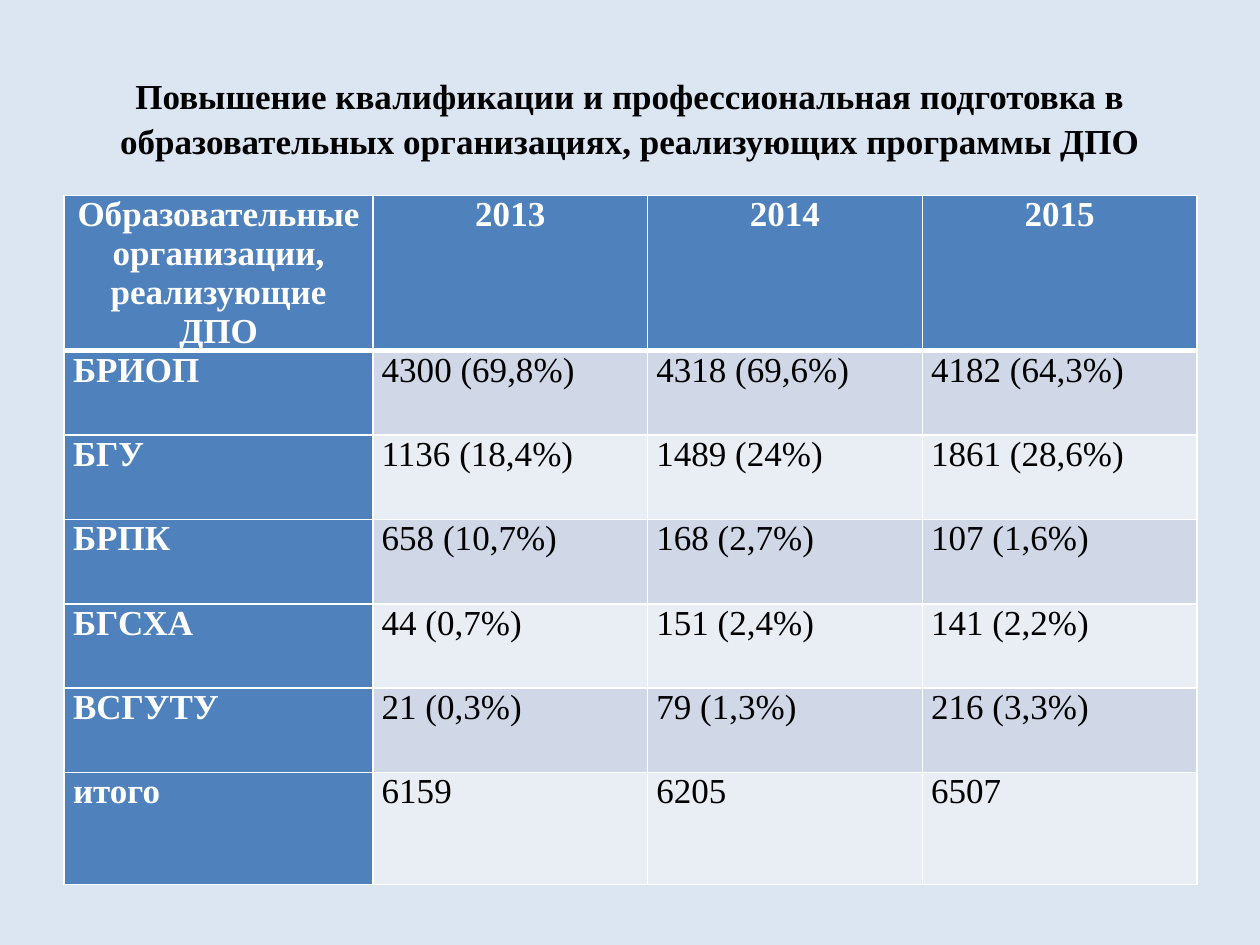
import pptx
import pptx.util
import pptx.dml.color
import pptx.enum.text
import pptx.oxml
import pptx.oxml.ns

Inches = pptx.util.Inches
Pt = pptx.util.Pt
RGBColor = pptx.dml.color.RGBColor
Align = pptx.enum.text.PP_ALIGN
Anchor = pptx.enum.text.MSO_ANCHOR

SKY = RGBColor(0xDC, 0xE6, 0xF2)
BLUE = RGBColor(0x4F, 0x81, 0xBD)
BANDS = [RGBColor(0xD0, 0xD8, 0xE8), RGBColor(0xE9, 0xED, 0xF4)]
WHITE = RGBColor(0xFF, 0xFF, 0xFF)
BLACK = RGBColor(0, 0, 0)
FONT = "Times New Roman"

TITLE = ("Повышение квалификации и профессиональная подготовка в "
         "образовательных организациях, реализующих программы ДПО")
ROWS = [
    ["Образовательные организации, реализующие ДПО", "2013", "2014", "2015"],
    ["БРИОП", "4300 (69,8%)", "4318 (69,6%)", "4182 (64,3%)"],
    ["БГУ", "1136 (18,4%)", "1489 (24%)", "1861 (28,6%)"],
    ["БРПК", "658 (10,7%)", "168 (2,7%)", "107 (1,6%)"],
    ["БГСХА", "44 (0,7%)", "151 (2,4%)", "141 (2,2%)"],
    ["ВСГУТУ", "21 (0,3%)", "79 (1,3%)", "216 (3,3%)"],
    ["итого", "6159", "6205", "6507"],
]
WIDTHS = [2.45, 2.18, 2.18, 2.18]
HEIGHTS = [1] + [0.67] * 5 + [0.89]


def write(frame, text, size=20, color=BLACK, bold=False, align=Align.CENTER,
          space=None):
    par = frame.paragraphs[0]
    par.alignment = align
    if space:
        par.line_spacing = space
    run = par.add_run()
    run.text = text
    font = run.font
    font.name, font.size, font.bold = FONT, Pt(size), bold
    font.color.rgb = color


def edge(cell, side, width):
    # Borders come before the fill in the cell properties
    line = pptx.oxml.parse_xml(
        f'<a:{side} {pptx.oxml.ns.nsdecls("a")} w="{Pt(width)}">'
        f'<a:solidFill><a:srgbClr val="{WHITE}"/></a:solidFill></a:{side}>')
    cell._tc.get_or_add_tcPr().append(line)


def head(slide, left, top, width, height):
    title = slide.shapes.title
    title.left, title.top = Inches(left), Inches(top)
    title.width, title.height = Inches(width), Inches(height)
    frame = title.text_frame
    frame.word_wrap = True
    frame.vertical_anchor = Anchor.MIDDLE
    write(frame, TITLE, bold=True, space=1.08)


def grid(slide, left, top, width, height):
    table = slide.shapes.add_table(
        len(ROWS), len(WIDTHS), Inches(left), Inches(top),
        Inches(width), Inches(height)).table
    table.first_col = True
    for col, size in zip(table.columns, WIDTHS):
        col.width = Inches(size)
    for row, size in zip(table.rows, HEIGHTS):
        row.height = Inches(size)

    for r, texts in enumerate(ROWS):
        for c, text in enumerate(texts):
            cell = table.cell(r, c)
            cell.margin_left = cell.margin_right = Inches(0.07)
            cell.margin_top = cell.margin_bottom = 0
            # Thick rule below the header row
            for side, thick in (("lnL", False), ("lnR", False),
                                ("lnT", r == 1), ("lnB", r == 0)):
                edge(cell, side, 3 if thick else 1)
            label = r == 0 or c == 0
            cell.fill.solid()
            cell.fill.fore_color.rgb = BLUE if label else BANDS[(r - 1) % 2]
            write(cell.text_frame, text, bold=label,
                  color=WHITE if label else BLACK,
                  align=Align.CENTER if r == 0 else Align.JUSTIFY)


def main():
    deck = pptx.Presentation()
    deck.slide_width, deck.slide_height = Inches(10), Inches(7.5)
    slide = deck.slides.add_slide(deck.slide_layouts[5])
    slide.background.fill.solid()
    slide.background.fill.fore_color.rgb = SKY
    head(slide, 0.5, 0.3, 9, 1.25)
    grid(slide, 0.51, 1.55, 8.99, 5.6)
    deck.save("out.pptx")


if __name__ == "__main__":
    main()
